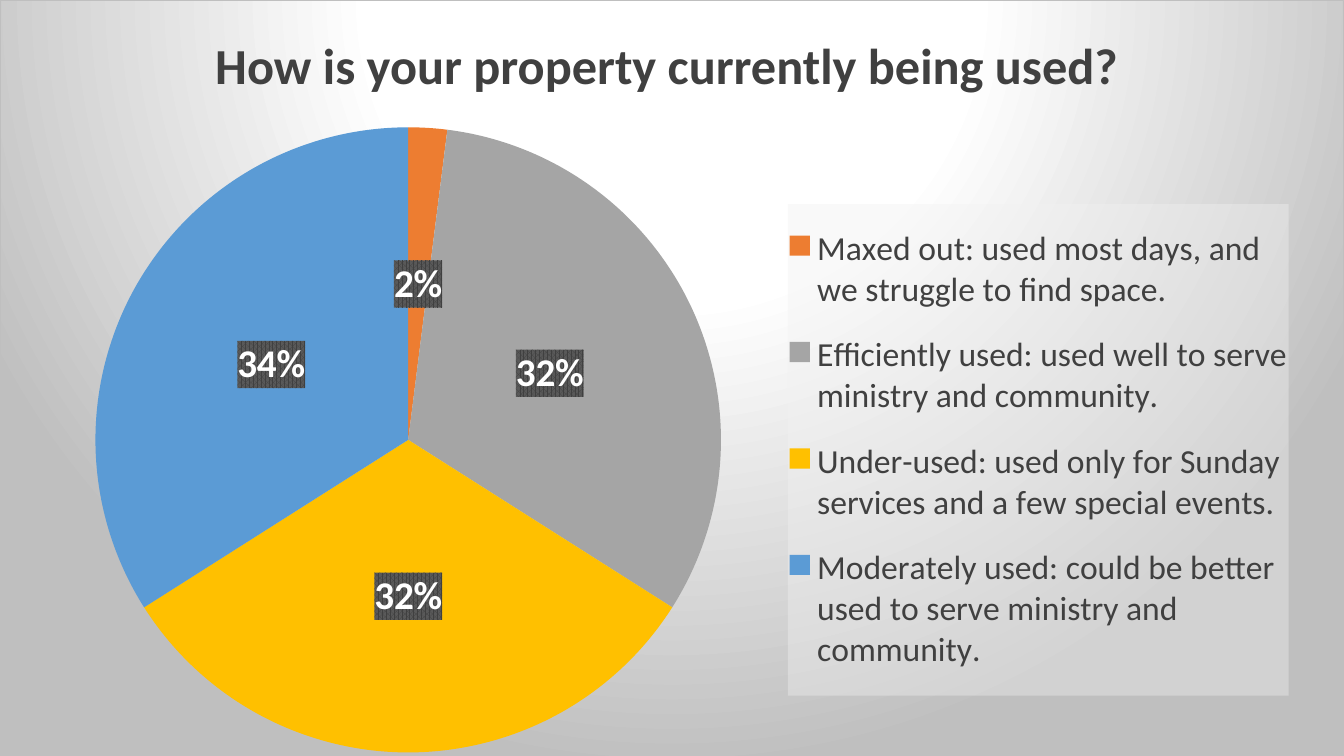
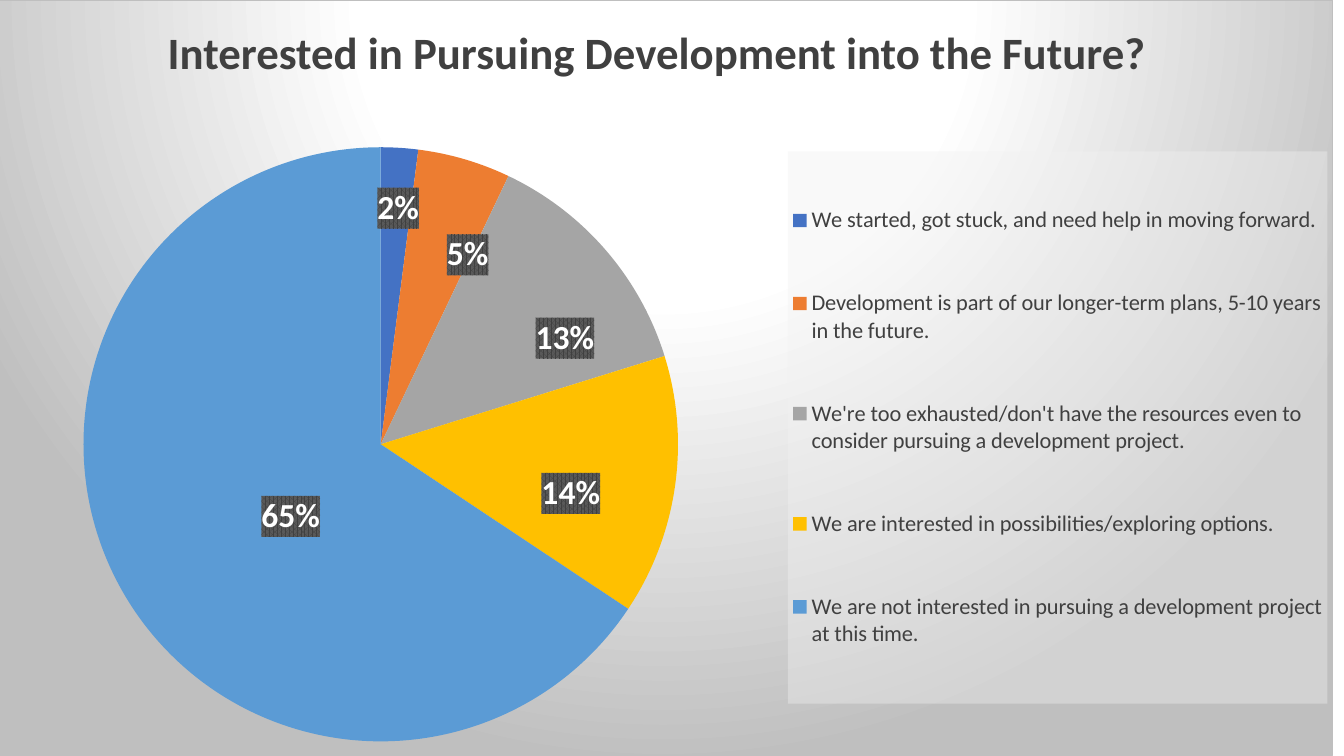
from copy import deepcopy

from pptx import Presentation
from pptx import util as u
from pptx.chart import data as chart_data
from pptx.dml.color import RGBColor
from pptx.enum import chart as ch
from pptx.enum import text
from pptx.oxml import parse_xml
from pptx.oxml.ns import nsdecls, qn

PX = 12192000 / 1344
FONT = "Calibri"
BLACK = RGBColor(0x00, 0x00, 0x00)
INK = RGBColor(0x40, 0x40, 0x40)
WHITE = RGBColor(0xFF, 0xFF, 0xFF)
EDGE = RGBColor(0xBF, 0xBF, 0xBF)
PANEL = RGBColor(0xF2, 0xF2, 0xF2)
STRIPE = RGBColor(0x59, 0x59, 0x59)
SLICE_COLORS = [
    RGBColor(0x44, 0x72, 0xC4),
    RGBColor(0xED, 0x7D, 0x31),
    RGBColor(0xA5, 0xA5, 0xA5),
    RGBColor(0xFF, 0xC0, 0x00),
    RGBColor(0x5B, 0x9B, 0xD5),
]

SURVEYS = [
    {
        "title": "How is your property currently being used?",
        "title_box": (117, 24, 1100, 80),
        "title_size": 36,
        "chart_box": (0, 0, 1344, 767),
        "pie_box": (95, 127, 626, 626),
        "legend_box": (788, 204, 501, 492),
        "legend_size": 24,
        "label_size": 28,
        "answers": [
            ("How is your property currently being used?", None, None),
            ("Maxed out: used most days, and we struggle to find space.", 2, None),
            ("Efficiently used: used well to serve ministry and community.", 32, None),
            ("Under-used: used only for Sunday services and a few special events.", 32, None),
            ("Moderately used: could be better used to serve ministry and community.", 34, None),
        ],
    },
    {
        "title": "Interested in Pursuing Development into the Future?",
        "title_box": (107, 12, 1100, 80),
        "title_size": 32,
        "chart_box": (-7, 0, 1340, 756),
        "pie_box": (83, 147, 595, 595),
        "legend_box": (788, 151, 540, 553),
        "legend_size": 16,
        "label_size": 24,
        "answers": [
            ("We started, got stuck, and need help in moving forward.", 2, (8, -88)),
            ("Development is part of our longer-term plans, 5-10 years in the future.", 5, (45, -47)),
            ("We're too exhausted/don't have the resources even to consider pursuing "
             "a development project.", 13, (72, -9)),
            ("We are interested in possibilities/exploring options.", 14, (43, 28)),
            ("We are not interested in pursuing a development project at this time.", 65, (41, 2)),
        ],
    },
]


def px(lengths):
    return [u.Emu(round(n * PX)) for n in lengths]


def chart_xml(tag, inner):
    return parse_xml(f'<c:{tag} {nsdecls("c", "a")}>{inner}</c:{tag}>')


def color_xml(color, extra=""):
    return f'<a:srgbClr val="{color}">{extra}</a:srgbClr>'


def box_layout(box, chart_box, target=""):
    left, top, width, height = box
    chart_left, chart_top, chart_width, chart_height = chart_box
    shares = {
        "x": (left - chart_left) / chart_width,
        "y": (top - chart_top) / chart_height,
        "w": width / chart_width,
        "h": height / chart_height,
    }
    modes = '<c:xMode val="edge"/><c:yMode val="edge"/>'
    sizes = "".join(f'<c:{key} val="{share:.4f}"/>' for key, share in shares.items())
    return chart_xml("layout", f"<c:manualLayout>{target}{modes}{sizes}</c:manualLayout>")


def offset_layout(offset, chart_box):
    x, y = offset[0] / chart_box[2], offset[1] / chart_box[3]
    return chart_xml("layout", f'<c:manualLayout><c:x val="{x:.4f}"/><c:y val="{y:.4f}"/></c:manualLayout>')


def backdrop():
    stops = "".join(
        f'<a:gs pos="{pos}">{color_xml(color)}</a:gs>'
        for pos, color in [(0, WHITE), (39000, WHITE), (100000, EDGE)])
    return chart_xml("spPr", (
        f'<a:gradFill><a:gsLst>{stops}</a:gsLst><a:path path="circle">'
        '<a:fillToRect l="50000" t="-80000" r="50000" b="180000"/></a:path></a:gradFill>'
        f'<a:ln w="9525"><a:solidFill>{color_xml(EDGE)}</a:solidFill></a:ln>'))


def set_font(font, size, color, bold=False):
    font.name = FONT
    font.size = u.Pt(size)
    font.bold = bold
    font.color.rgb = color


def style_frame(chart, survey):
    space = chart.element
    body = space.find(qn("c:chart"))
    for corner in space.findall(qn("c:roundedCorners")):
        space.remove(corner)
    corners = chart_xml("roundedCorners", "")
    corners.set("val", "0")
    body.addprevious(corners)
    body.addnext(backdrop())
    plot_area = body.find(qn("c:plotArea"))
    for layout in plot_area.findall(qn("c:layout")):
        plot_area.remove(layout)
    plot_area.insert(0, box_layout(
        survey["pie_box"], survey["chart_box"], '<c:layoutTarget val="inner"/>'))


def style_legend(chart, survey):
    chart.has_legend = True
    legend = chart.legend
    legend.position = ch.XL_LEGEND_POSITION.RIGHT
    legend.include_in_layout = False
    set_font(legend.font, survey["legend_size"], INK)
    overlay = chart.element.find(".//" + qn("c:legend")).find(qn("c:overlay"))
    for i, (_, share, _) in enumerate(survey["answers"]):
        if share is None:
            overlay.addprevious(chart_xml("legendEntry", f'<c:idx val="{i}"/><c:delete val="1"/>'))
    overlay.addprevious(box_layout(survey["legend_box"], survey["chart_box"]))
    panel = color_xml(PANEL, '<a:alpha val="39000"/>')
    overlay.addnext(chart_xml("spPr", f"<a:solidFill>{panel}</a:solidFill><a:ln><a:noFill/></a:ln>"))


def style_slices(chart, survey):
    plot = chart.plots[0]
    plot.vary_by_categories = True
    series = plot.series[0]
    labels = series.data_labels
    labels.show_value = True
    labels.show_percentage = False
    labels.show_leader_lines = False
    labels.number_format = '0"%"'
    labels.number_format_is_linked = False
    labels.position = ch.XL_LABEL_POSITION.CENTER
    set_font(labels.font, survey["label_size"], WHITE, True)
    shared = chart.element.find(".//" + qn("c:dLbls"))
    shared.find(qn("c:txPr")).addprevious(chart_xml("spPr", (
        f'<a:pattFill prst="pct75"><a:fgClr>{color_xml(INK)}</a:fgClr>'
        f'<a:bgClr>{color_xml(STRIPE)}</a:bgClr></a:pattFill><a:ln><a:noFill/></a:ln>')))
    for i, (_, _, offset) in enumerate(survey["answers"]):
        point = series.points[i]
        point.format.fill.solid()
        point.format.fill.fore_color.rgb = SLICE_COLORS[i]
        if offset:
            point.data_label.position = ch.XL_LABEL_POSITION.CENTER
            label = shared.findall(qn("c:dLbl"))[i]
            for tag in ("c:spPr", "c:txPr"):
                for part in label.findall(qn(tag)):
                    label.remove(part)
            look = [deepcopy(shared.find(qn(tag))) for tag in ("c:numFmt", "c:spPr", "c:txPr")]
            for part in reversed([offset_layout(offset, survey["chart_box"])] + look):
                label.find(qn("c:idx")).addnext(part)


def add_title(slide, survey):
    title = slide.shapes.title
    title.left, title.top, title.width, title.height = px(survey["title_box"])
    frame = title.text_frame
    frame.text = survey["title"]
    frame.word_wrap = True
    frame.vertical_anchor = text.MSO_ANCHOR.MIDDLE
    heading = frame.paragraphs[0]
    heading.alignment = text.PP_ALIGN.CENTER
    set_font(heading.font, survey["title_size"], INK, True)
    title.element.getparent().append(title.element)


def add_pie(slide, survey):
    answers = survey["answers"]
    data = chart_data.CategoryChartData()
    data.categories = [answer[0] for answer in answers]
    data.add_series("Series 1", [answer[1] for answer in answers])
    chart = slide.shapes.add_chart(ch.XL_CHART_TYPE.PIE, *px(survey["chart_box"]), data).chart
    chart.has_title = False
    set_font(chart.font, 10, BLACK)
    style_frame(chart, survey)
    style_legend(chart, survey)
    style_slices(chart, survey)


def main():
    deck = Presentation()
    deck.slide_width, deck.slide_height = px((1344, 756))
    for survey in SURVEYS:
        slide = deck.slides.add_slide(deck.slide_layouts[5])
        add_pie(slide, survey)
        add_title(slide, survey)
    deck.save("out.pptx")


if __name__ == "__main__":
    main()
